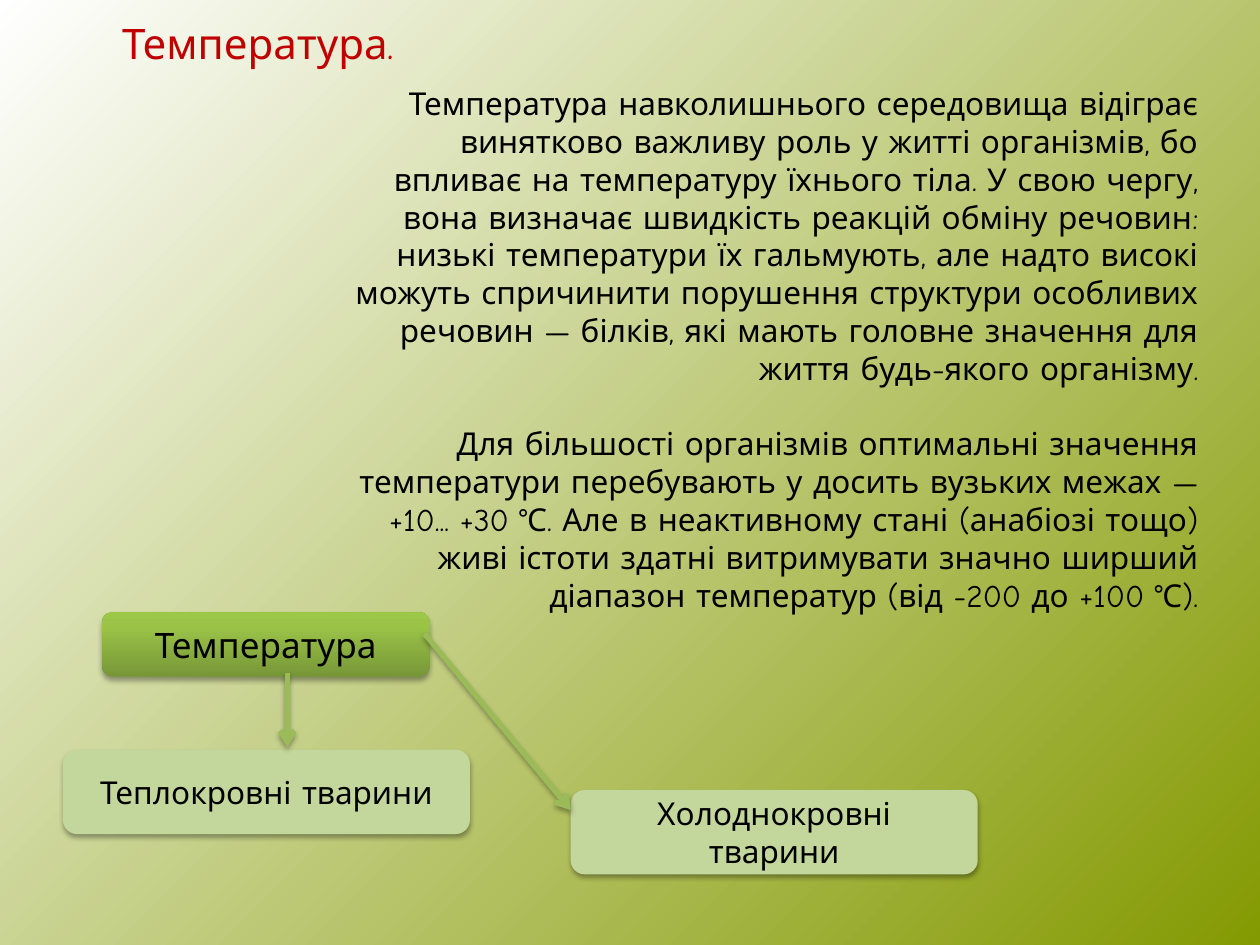
from copy import deepcopy

from lxml import etree
from pptx import Presentation
from pptx.dml.color import RGBColor
from pptx.enum.shapes import MSO_CONNECTOR, MSO_SHAPE
from pptx.enum.text import MSO_ANCHOR, PP_ALIGN
from pptx.oxml.ns import qn
from pptx.util import Inches, Pt

ROUNDED = MSO_SHAPE.ROUNDED_RECTANGLE
STRAIGHT = MSO_CONNECTOR.STRAIGHT
LEFT, CENTER, RIGHT = PP_ALIGN.LEFT, PP_ALIGN.CENTER, PP_ALIGN.RIGHT
TOP, MIDDLE = MSO_ANCHOR.TOP, MSO_ANCHOR.MIDDLE

FONT = "Comic Neue"
COLORS = {"text": "000000", "title": "C00000", "branch": "C3D69B", "arrow": "9BBB59"}
BACKGROUND_STOPS = [(0, "FFFFFF"), (1, "849A02")]
ROOT_STOPS = [(0, "779737"), (0.8, "9BC348"), (1, "9DC746")]

TITLE = "Температура."
BODY = [
    "Температура навколишнього середовища відіграє винятково важливу роль у житті "
    "організмів, бо впливає на температуру їхнього тіла. У свою чергу, вона визначає "
    "швидкість реакцій обміну речовин: низькі температури їх гальмують, але надто "
    "високі можуть спричинити порушення структури особливих речовин — білків, які "
    "мають головне значення для життя будь-якого організму.",
    "Для більшості організмів оптимальні значення температури перебувають у досить "
    "вузьких межах — +10... +30 °С. Але в неактивному стані (анабіозі тощо) живі "
    "істоти здатні витримувати значно ширший діапазон температур "
    "(від -200 до +100 °С).",
]
ROOT = ("Температура", (0.81, 4.86, 2.6, 0.51))
BRANCHES = [
    ("Теплокровні тварини", (0.5, 5.95, 3.23, 0.67)),
    ("Холоднокровні тварини", (4.53, 6.27, 3.23, 0.67)),
]
ARROWS = [(2.28, 5.34, 2.28, 5.93), (3.37, 5.03, 4.53, 6.43)]


def inches(values):
    return [Inches(value) for value in values]


def style(paragraph, size, align, color="text"):
    paragraph.alignment = align
    paragraph.font.name = FONT
    paragraph.font.size = Pt(size)
    paragraph.font.color.rgb = RGBColor.from_string(COLORS[color])


def set_gradient(fill, element, stops, angle):
    """Fill with any number of stops; angle runs counter-clockwise."""
    fill.gradient()
    fill.gradient_angle = angle
    stop_list = element.xpath(".//a:gsLst")[0]
    while len(stop_list) < len(stops):
        stop_list.append(deepcopy(stop_list[-1]))
    for stop, (position, color) in zip(fill.gradient_stops, stops):
        stop.position = position
        stop.color.rgb = RGBColor.from_string(color)


def add_shadow(shape):
    properties = shape._element.spPr
    effects = properties.find(qn("a:effectLst"))
    if effects is None:
        effects = etree.SubElement(properties, qn("a:effectLst"))
    shadow = etree.SubElement(
        effects, qn("a:outerShdw"), blurRad=str(Pt(3.1)), dist=str(Pt(1.8)),
        dir="5400000", rotWithShape="0")
    color = etree.SubElement(shadow, qn("a:srgbClr"), val="000000")
    etree.SubElement(color, qn("a:alpha"), val="35000")


def add_box(slide, label, place, size):
    box = slide.shapes.add_shape(ROUNDED, *inches(place))
    box.line.fill.background()
    box.shadow.inherit = False
    add_shadow(box)
    frame = box.text_frame
    frame.word_wrap = True
    frame.vertical_anchor = MIDDLE
    frame.text = label
    style(frame.paragraphs[0], size, CENTER)
    return box


def add_arrow(slide, ends):
    arrow = slide.shapes.add_connector(STRAIGHT, *inches(ends))
    arrow.line.width = Pt(3)
    arrow.line.color.rgb = RGBColor.from_string(COLORS["arrow"])
    etree.SubElement(arrow._element.spPr.find(qn("a:ln")), qn("a:tailEnd"), type="arrow")
    add_shadow(arrow)


def main():
    deck = Presentation()
    deck.slide_width, deck.slide_height = Inches(10), Inches(7.5)
    slide = deck.slides.add_slide(deck.slide_layouts[5])
    set_gradient(slide.background.fill, slide._element, BACKGROUND_STOPS, 315)

    title = slide.shapes.title
    title.left, title.top, title.width, title.height = inches((0.87, 0.09, 2.49, 0.5))
    title.text_frame.text = TITLE
    title.text_frame.word_wrap = False
    title.text_frame.vertical_anchor = TOP
    style(title.text_frame.paragraphs[0], 24, LEFT, "title")

    body = slide.shapes.add_textbox(*inches((2.68, 0.62, 6.93, 4.34))).text_frame
    body.word_wrap = True
    body.text = "\n".join(BODY)
    for paragraph in body.paragraphs:
        style(paragraph, 18, RIGHT)
    body.paragraphs[1].space_before = Pt(21.6)

    root = add_box(slide, *ROOT, 20)
    set_gradient(root.fill, root._element, ROOT_STOPS, 90)
    for label, place in BRANCHES:
        branch = add_box(slide, label, place, 18)
        branch.fill.solid()
        branch.fill.fore_color.rgb = RGBColor.from_string(COLORS["branch"])
    for ends in ARROWS:
        add_arrow(slide, ends)

    deck.save("out.pptx")


if __name__ == "__main__":
    main()
